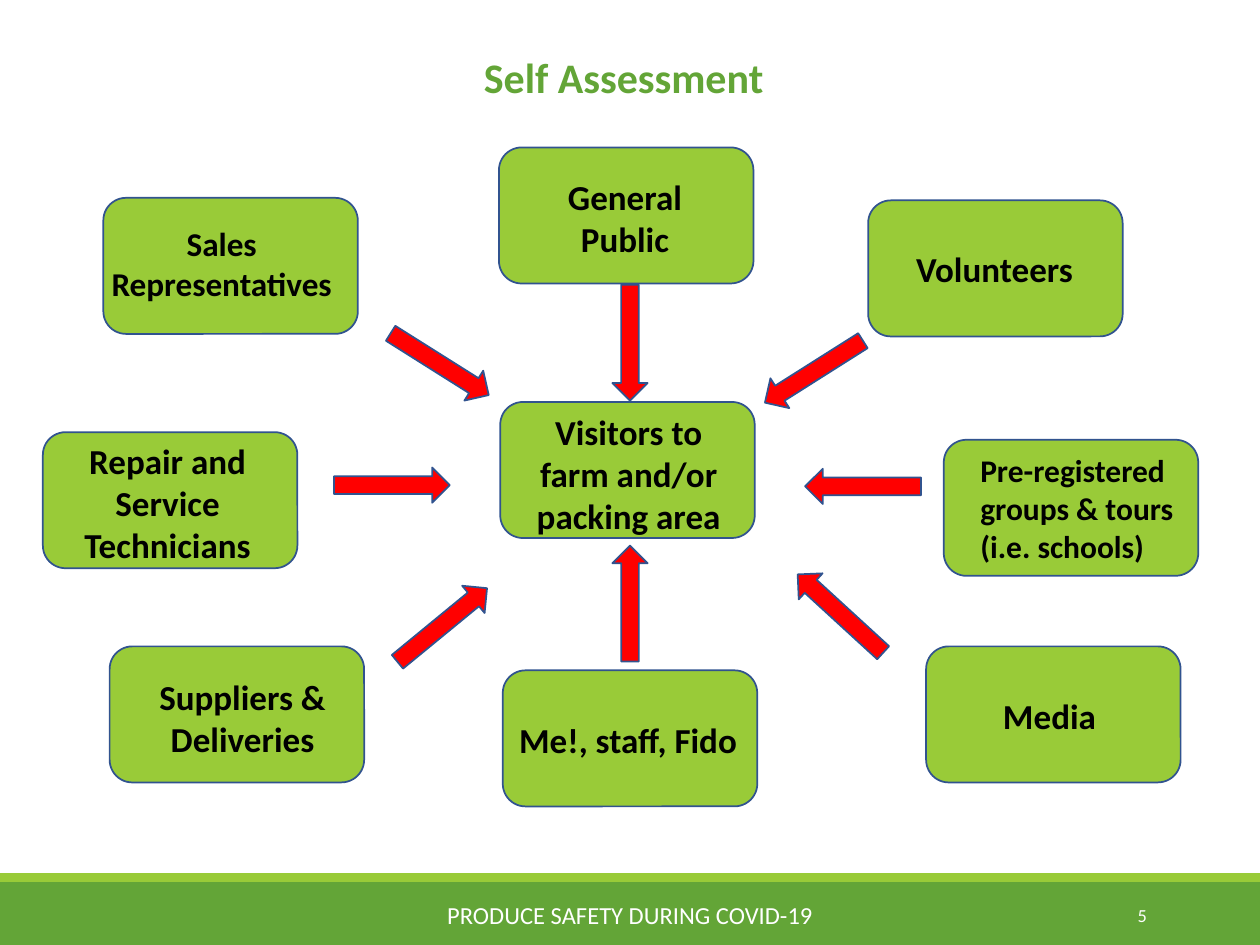
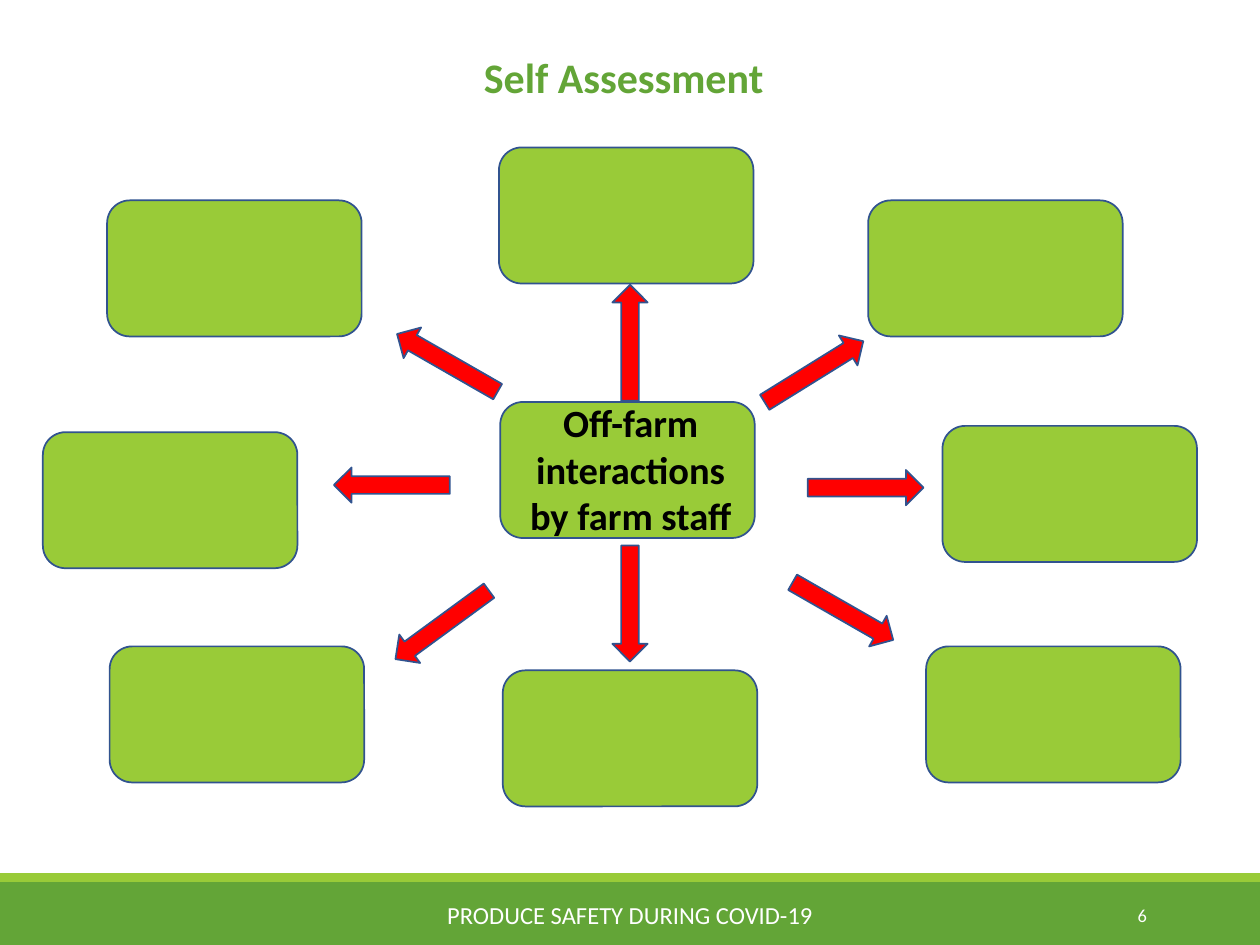
from collections import namedtuple

from pptx import Presentation
from pptx.dml.color import RGBColor
from pptx.enum.shapes import MSO_SHAPE
from pptx.enum.text import MSO_ANCHOR, MSO_AUTO_SIZE, PP_ALIGN
from pptx.util import Inches, Pt

GREEN, LIME, RED, NAVY = "63A537", "99CB38", "FF0000", "31538F"
BLACK, WHITE = "000000", "FFFFFF"
FONT = "Calibri"
SLIDE_SIZE = (10, 7.5)
CARD_SIZE = (2.02, 1.08)
ARROW_SIZE = (0.28, 0.92)
LABEL_INSETS = dict(margin_left=0.07, margin_right=0.07,
                    margin_top=0.04, margin_bottom=0.04)
FOOTER = "PRODUCE SAFETY DURING COVID-19"

# A label's offset is measured from the corner of its card.
Label = namedtuple("Label", "text offset extent size align",
                   defaults=(20, PP_ALIGN.CENTER))
Spoke = namedtuple("Spoke", "card arrow angle")

HUB = (3.97, 3.19)
VISITOR_SPOKES = {
    "top": Spoke((3.96, 1.17), (4.86, 2.26), 0),
    "left": Spoke((0.34, 3.43), (2.97, 3.39), 270),
    "right": Spoke((7.49, 3.49), (6.71, 3.4), 90),
    "upper right": Spoke((6.89, 1.59), (6.32, 2.49), 57.7),
    "upper left": Spoke((0.82, 1.57), (3.35, 2.43), 302.2),
    "bottom": Spoke((3.99, 5.32), (4.86, 4.33), 180),
    "lower right": Spoke((7.35, 5.13), (6.53, 4.41), 132.5),
    "lower left": Spoke((0.87, 5.13), (3.37, 4.5), 230.6),
}
# Staff leave the farm, so every arrow is turned to point outwards.
STAFF_SPOKES = {
    place: spoke._replace(angle=(spoke.angle + 180) % 360)
    for place, spoke in VISITOR_SPOKES.items()
} | {
    "right": Spoke((7.48, 3.38), (6.73, 3.41), 270),
    "upper right": Spoke((6.89, 1.59), (6.32, 2.49), 238.2),
    "upper left": Spoke((0.85, 1.59), (3.41, 2.42), 119.8),
    "lower right": Spoke((7.35, 5.13), (6.55, 4.39), 299.8),
    "lower left": Spoke((0.87, 5.13), (3.37, 4.5), 53.8),
}

VISITORS = Label("Visitors to farm and/or packing area", (0.2, 0.03), (1.64, 1.09))
VISITOR_LABELS = {
    "top": Label("General Public", (0.21, 0.18), (1.58, 0.75)),
    "left": Label("Repair and Service Technicians", (0.2, 0.02), (1.58, 1.09)),
    "right": Label("Pre-registered groups & tours (i.e. schools)",
                   (0.22, 0.05), (1.81, 0.98), 18, PP_ALIGN.LEFT),
    "upper right": Label("Volunteers", (0.31, 0.33), (1.58, 0.41),
                         align=PP_ALIGN.LEFT),
    "upper left": Label("Sales Representatives", (-0.06, 0.16), (2, 0.72), 19),
    "bottom": Label("Me!, staff, Fido", (0.06, 0.34), (1.92, 0.41),
                    align=PP_ALIGN.LEFT),
    "lower right": Label("Media", (0.54, 0.34), (1.58, 0.41), align=PP_ALIGN.LEFT),
    "lower left": Label("Suppliers & Deliveries", (0.26, 0.19), (1.59, 0.75)),
}
STAFF = Label("Off-farm interactions by farm staff", (0.09, -0.06), (1.89, 1.19), 22)


def rgb(hex_code):
    return RGBColor.from_string(hex_code)


def to_inches(*lengths):
    return [Inches(length) for length in lengths]


def set_all(target, values):
    for name, value in values.items():
        setattr(target, name, value)


def write(frame, text, size, color, align, bold=False, wrap=True,
          anchor=MSO_ANCHOR.TOP):
    set_all(frame, dict(text=text, word_wrap=wrap, vertical_anchor=anchor,
                        auto_size=MSO_AUTO_SIZE.NONE))
    paragraph = frame.paragraphs[0]
    paragraph.alignment = align
    font = paragraph.runs[0].font
    set_all(font, dict(name=FONT, size=Pt(size), bold=bold))
    font.color.rgb = rgb(color)


def add_text(slide, box, *args, insets=None, **kwargs):
    frame = slide.shapes.add_textbox(*to_inches(*box)).text_frame
    set_all(frame, {side: Inches(inset) for side, inset in (insets or {}).items()})
    write(frame, *args, **kwargs)


def add_figure(slide, preset, box, fill, outline=None):
    figure = slide.shapes.add_shape(preset, *to_inches(*box))
    figure.shadow.inherit = False
    figure.fill.solid()
    figure.fill.fore_color.rgb = rgb(fill)
    if outline:
        figure.line.color.rgb = rgb(outline)
        figure.line.width = Pt(1)
    else:
        figure.line.fill.background()
    return figure


def add_title(slide, text, box):
    title = slide.shapes.title
    set_all(title, dict(zip(("left", "top", "width", "height"), to_inches(*box))))
    write(title.text_frame, text, 24, GREEN, PP_ALIGN.LEFT, bold=True, wrap=False)


def add_footer(slide, number, box):
    """Draw the two bands, the running text and the page number."""
    left, top, width, height = box
    stripe = 0.07
    add_figure(slide, MSO_SHAPE.RECTANGLE,
               (left, top + stripe, width, height - stripe), GREEN)
    add_figure(slide, MSO_SHAPE.RECTANGLE, (left, top, width, stripe), LIME)
    text_top = top + 0.13
    add_text(slide, (left + 3.02, text_top, 3.96, 0.4), FOOTER, 14, WHITE,
             PP_ALIGN.CENTER, anchor=MSO_ANCHOR.MIDDLE)
    add_text(slide, (left + 8.12, text_top, 1.08, 0.4), str(number), 10.5, WHITE,
             PP_ALIGN.RIGHT, anchor=MSO_ANCHOR.MIDDLE)


def add_card(slide, corner, label=None):
    add_figure(slide, MSO_SHAPE.FLOWCHART_ALTERNATE_PROCESS,
               (*corner, *CARD_SIZE), LIME, NAVY)
    if label:
        start = [edge + shift for edge, shift in zip(corner, label.offset)]
        add_text(slide, (*start, *label.extent), label.text, label.size, BLACK,
                 label.align, bold=True, insets=LABEL_INSETS)


def add_arrow(slide, corner, angle):
    arrow = add_figure(slide, MSO_SHAPE.DOWN_ARROW, (*corner, *ARROW_SIZE), RED, NAVY)
    arrow.rotation = angle


def add_assessment_slide(deck, number, hub_label, spokes, labels):
    slide = deck.slides.add_slide(deck.slide_layouts[5])
    add_title(slide, "Self Assessment", (3.74, 0.36, 2.45, 0.5))
    add_footer(slide, number, (0, 6.93, SLIDE_SIZE[0], 0.57))
    add_card(slide, HUB, hub_label)
    for place, spoke in spokes.items():
        add_card(slide, spoke.card, labels.get(place))
        add_arrow(slide, spoke.arrow, spoke.angle)


def main():
    deck = Presentation()
    deck.slide_width, deck.slide_height = to_inches(*SLIDE_SIZE)
    add_assessment_slide(deck, 5, VISITORS, VISITOR_SPOKES, VISITOR_LABELS)
    add_assessment_slide(deck, 6, STAFF, STAFF_SPOKES, {})
    deck.save("out.pptx")


if __name__ == "__main__":
    main()
